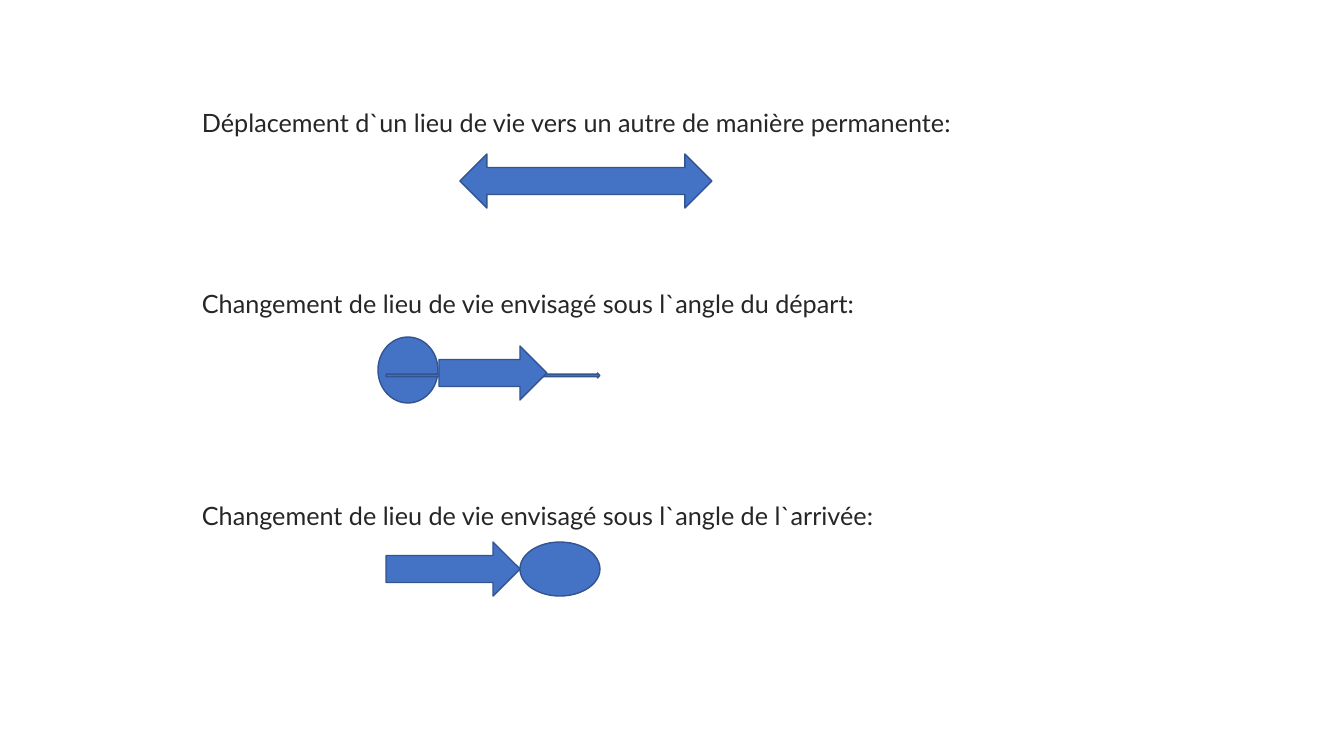
import pptx
import pptx.dml.color
import pptx.enum.shapes
import pptx.util

EMU_PER_PX = 914400 / 100.8
SHAPE = pptx.enum.shapes.MSO_SHAPE

# Each statement with the space before it, in points
STATEMENTS = [
    ("Déplacement d`un lieu de vie vers un autre de manière permanente:", 0),
    ("Changement de lieu de vie envisagé sous l`angle du départ:", 108),
    ("Changement de lieu de vie envisagé sous l`angle de l`arrivée:", 129.6),
]

# Kind, left, top, width, height in px, from back to front
SYMBOLS = [
    (SHAPE.LEFT_RIGHT_ARROW, 460, 154, 252, 54),
    (SHAPE.OVAL, 378, 337, 60, 66),
    (SHAPE.RIGHT_ARROW, 386, 373, 214, 5),
    (SHAPE.RIGHT_ARROW, 439, 346, 108, 54),
    (SHAPE.RIGHT_ARROW, 386, 542, 134, 54),
    (SHAPE.OVAL, 520, 542, 80, 54),
]


def px(n):
    return pptx.util.Emu(round(n * EMU_PER_PX))


def rgb(value):
    return pptx.dml.color.RGBColor.from_string(value)


def add_statements(s, x, y, w, h):
    tf = s.shapes.add_textbox(px(x), px(y), px(w), px(h)).text_frame
    tf.word_wrap = True
    font_format = {"name": "Lato", "size": pptx.util.Pt(18)}
    for i, (text, gap) in enumerate(STATEMENTS):
        p = tf.add_paragraph() if i else tf.paragraphs[0]
        p.space_before = pptx.util.Pt(gap)
        r = p.add_run()
        r.text = text
        for name, value in font_format.items():
            setattr(r.font, name, value)
        r.font.color.rgb = rgb("262626")


def add_symbol(s, kind, x, y, w, h):
    sp = s.shapes.add_shape(kind, px(x), px(y), px(w), px(h))
    sp.shadow.inherit = False
    sp.fill.solid()
    sp.fill.fore_color.rgb = rgb("4472C4")
    sp.line.color.rgb = rgb("325491")
    sp.line.width = pptx.util.Pt(1)


def main():
    prs = pptx.Presentation()
    prs.slide_width, prs.slide_height = px(1344), px(756)
    s = prs.slides.add_slide(prs.slide_layouts[6])
    add_statements(s, 192, 102, 815, 590)
    for symbol in SYMBOLS:
        add_symbol(s, *symbol)
    prs.save("out.pptx")


if __name__ == "__main__":
    main()
